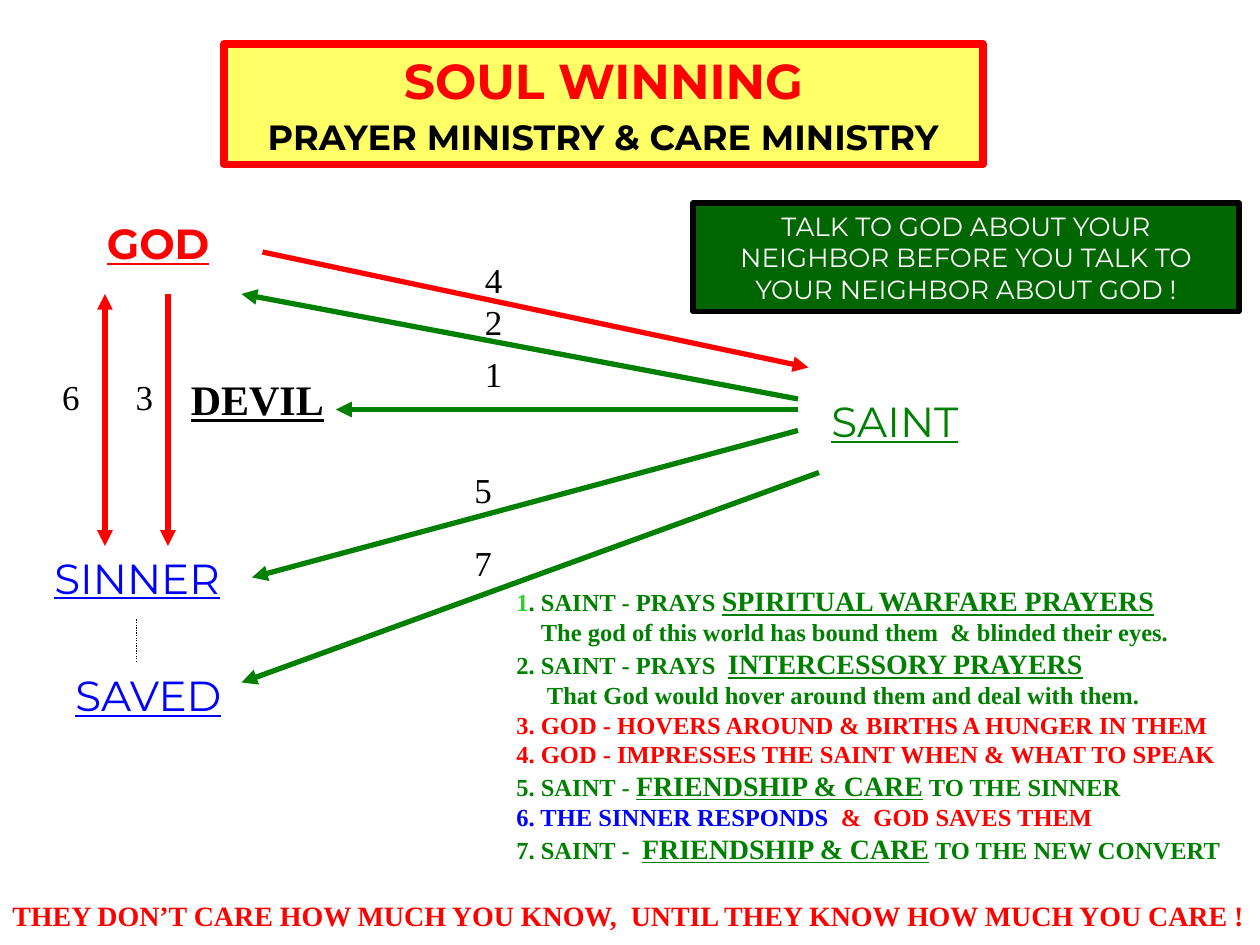
from lxml import etree
from pptx import Presentation
from pptx.dml.color import RGBColor
from pptx.enum.dml import MSO_LINE
from pptx.enum.shapes import MSO_CONNECTOR, MSO_SHAPE
from pptx.enum.text import MSO_ANCHOR, PP_ALIGN
from pptx.oxml.ns import qn
from pptx.util import Pt

CENTER = PP_ALIGN.CENTER
LEFT = PP_ALIGN.LEFT
TOP = MSO_ANCHOR.TOP
MIDDLE = MSO_ANCHOR.MIDDLE
STRAIGHT = MSO_CONNECTOR.STRAIGHT
RECTANGLE = MSO_SHAPE.RECTANGLE
DOTTED = MSO_LINE.ROUND_DOT

SANS = "Montserrat"
SERIF = "Times New Roman"
COLORS = {
    "red": "FF0000",
    "green": "008000",
    "light green": "33CC33",
    "dark green": "006600",
    "blue": "0000FF",
    "yellow": "FFFF66",
    "near black": "010000",
    "black": "000000",
    "white": "FFFFFF",
}

PEOPLE = [
    ("GOD", 30, 1, 74, SANS, "red", True),
    ("DEVIL", 78, 90, 102, SERIF, "black", True),
    ("SAINT", 444, 102.5, 98, SANS, "green", False),
    ("SINNER", 0, 192, 120, SANS, "blue", False),
    ("SAVED", 12, 259, 104, SANS, "blue", False),
]
NUMBERS = [
    ("1", 246, 78), ("2", 246, 48), ("3", 46.5, 91), ("4", 246, 24),
    ("5", 240, 144), ("6", 4.5, 91), ("7", 240, 186),
]
ARROWS = [
    (432, 114, 168, 114, "green", False),
    (432, 108, 114, 48, "green", False),
    (72, 48, 72, 192, "red", False),
    (126, 24, 438, 90, "red", False),
    (432, 126, 120, 210, "green", False),
    (444, 150, 114, 270, "green", False),
    (36, 48, 36, 192, "red", True),
]
STEPS = [
    (0, [("1", "light green", False), (". SAINT - PRAYS ", "green", False),
         ("SPIRITUAL WARFARE PRAYERS", "green", True)]),
    (14, [("The god of this world has bound them  & blinded their eyes.", "green", False)]),
    (0, [("2. SAINT - PRAYS  ", "green", False), ("INTERCESSORY PRAYERS", "green", True)]),
    (17.5, [("That God would hover around them and deal with them.", "green", False)]),
    (0, [("3. GOD - HOVERS AROUND & BIRTHS A HUNGER IN THEM", "red", False)]),
    (0, [("4. GOD - IMPRESSES THE SAINT WHEN & WHAT TO SPEAK", "red", False)]),
    (0, [("5. SAINT - ", "green", False), ("FRIENDSHIP & CARE", "green", True),
         (" TO THE SINNER", "green", False)]),
    (0, [("6. THE SINNER RESPONDS  ", "blue", False), ("&  GOD SAVES THEM", "red", False)]),
    (0, [("7. SAINT -  ", "green", False), ("FRIENDSHIP & CARE", "green", True),
         (" TO THE NEW CONVERT", "green", False)]),
]


def color(name):
    return RGBColor.from_string(COLORS[name])


def format_run(run, font_name, size, color_name, bold=False, underline=False):
    run.font.name = font_name
    run.font.size = Pt(size)
    run.font.bold = bold
    run.font.underline = underline
    run.font.color.rgb = color(color_name)


def paint(shape, fill, line, width):
    shape.fill.solid()
    shape.fill.fore_color.rgb = color(fill)
    shape.line.color.rgb = color(line)
    shape.line.width = Pt(width)


def add_text_box(slide, box, wrap=False):
    shape = slide.shapes.add_textbox(*map(Pt, box))
    shape.text_frame.word_wrap = wrap
    shape.text_frame.vertical_anchor = TOP
    return shape.text_frame


def add_label(slide, box, text, *style):
    paragraph = add_text_box(slide, box).paragraphs[0]
    paragraph.text = text
    paragraph.alignment = LEFT
    format_run(paragraph.runs[0], *style)


def add_line(slide, ends, color_name, width):
    line = slide.shapes.add_connector(STRAIGHT, *map(Pt, ends))
    line.line.color.rgb = color(color_name)
    line.line.width = Pt(width)
    etree.SubElement(line._element.spPr, qn("a:effectLst"))
    return line


def add_arrow(slide, ends, color_name, double):
    arrow = add_line(slide, ends, color_name, 3)
    outline = arrow.line._get_or_add_ln()
    for tag in ["a:headEnd", "a:tailEnd"] if double else ["a:tailEnd"]:
        etree.SubElement(outline, qn(tag), type="triangle")


def place_title(slide, box):
    title = slide.shapes.title
    title.left, title.top, title.width, title.height = map(Pt, box)
    paint(title, "yellow", "red", 4.5)
    frame = title.text_frame
    frame.text = "SOUL WINNING\nPRAYER MINISTRY & CARE MINISTRY"
    frame.word_wrap = False
    frame.vertical_anchor = TOP
    heading, subheading = frame.paragraphs
    for paragraph in frame.paragraphs:
        paragraph.alignment = CENTER
        paragraph.space_before = Pt(0)
    subheading.space_before = Pt(4)
    format_run(heading.runs[0], SANS, 28, "red", True)
    format_run(subheading.runs[0], SANS, 20, "near black", True)


def place_advice(slide, box):
    shape = slide.shapes.add_shape(RECTANGLE, *map(Pt, box))
    shape.shadow.inherit = False
    paint(shape, "dark green", "black", 3)
    frame = shape.text_frame
    frame.text = ("TALK TO GOD ABOUT YOUR NEIGHBOR BEFORE YOU TALK TO "
                  "YOUR NEIGHBOR ABOUT GOD !")
    frame.word_wrap = True
    frame.vertical_anchor = MIDDLE
    frame.paragraphs[0].alignment = CENTER
    format_run(frame.paragraphs[0].runs[0], SANS, 15, "white")


def place_diagram(slide, box):
    left, top = box[:2]
    for x1, y1, x2, y2, color_name, double in ARROWS:
        ends = (left + x1, top + y1, left + x2, top + y2)
        add_arrow(slide, ends, color_name, double)
    change = add_line(slide, (left + 54, top + 234, left + 54, top + 258), "black", 0.75)
    change.line.dash_style = DOTTED
    for text, x, y, width, font_name, color_name, bold in PEOPLE:
        add_label(slide, (left + x, top + y, width, 36), text,
                  font_name, 24, color_name, bold, True)
    for text, x, y in NUMBERS:
        add_label(slide, (left + x, top + y, 24.5, 32), text, SERIF, 20, "black")


def place_steps(slide, box):
    frame = add_text_box(slide, box, True)
    for index, (indent, pieces) in enumerate(STEPS):
        paragraph = frame.add_paragraph() if index else frame.paragraphs[0]
        paragraph.alignment = LEFT
        paragraph._p.get_or_add_pPr().set("marL", str(Pt(indent)))
        for text, color_name, stressed in pieces:
            run = paragraph.add_run()
            run.text = text
            format_run(run, SERIF, 16 if stressed else 14, color_name, True, stressed)


def place_motto(slide, box):
    add_label(slide, box,
              "THEY DON’T CARE HOW MUCH YOU KNOW,  UNTIL THEY KNOW HOW MUCH YOU CARE !",
              SERIF, 16, "red", True)


def main():
    presentation = Presentation()
    presentation.slide_width = Pt(720)
    presentation.slide_height = Pt(540)
    slide = presentation.slides.add_slide(presentation.slide_layouts[5])
    place_title(slide, (128, 25, 433.5, 69))
    place_diagram(slide, (24, 120, 542, 295))
    place_steps(slide, (288, 330, 432, 170))
    place_advice(slide, (396, 116, 312, 62))
    place_motto(slide, (0, 510, 726.5, 26.5))
    presentation.save("out.pptx")


if __name__ == "__main__":
    main()
